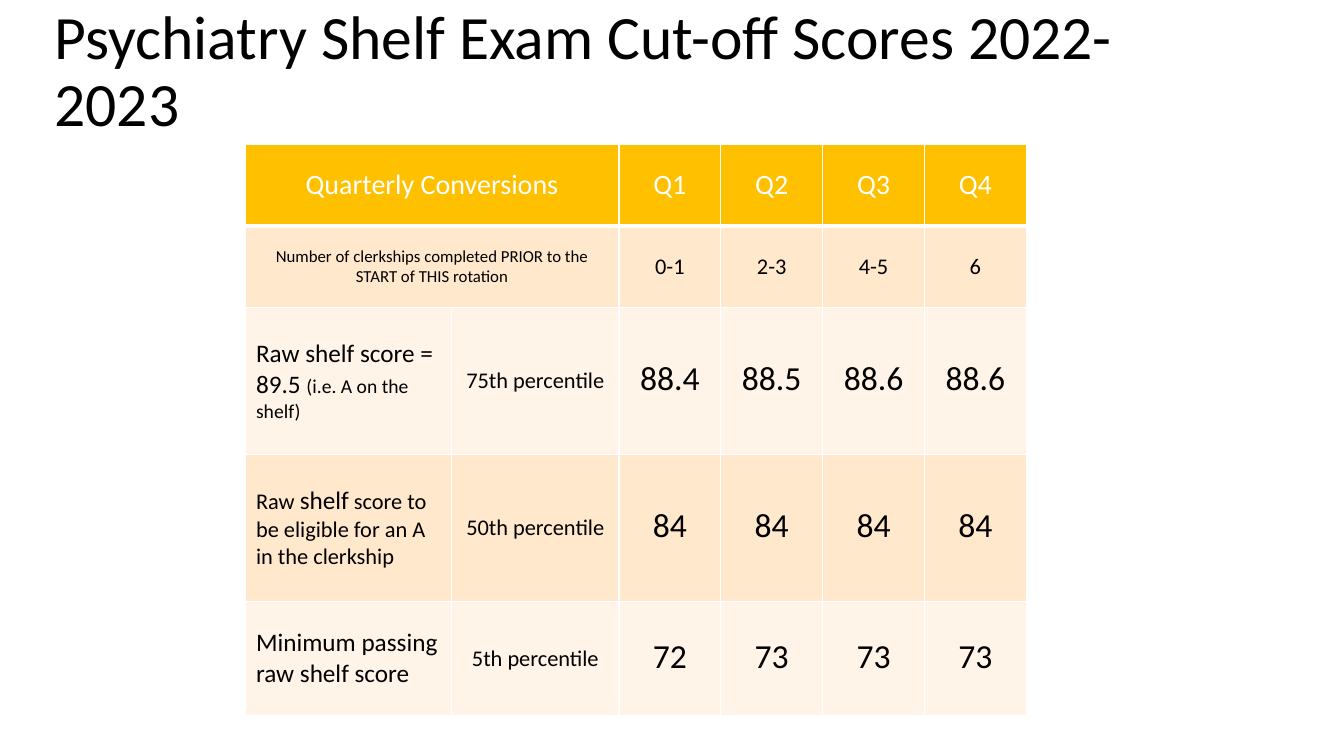
from lxml import etree
from pptx import Presentation
from pptx.dml.color import RGBColor
from pptx.enum import text
from pptx.oxml import ns
from pptx.util import Inches, Pt

WHITE = RGBColor(0xFF, 0xFF, 0xFF)
BLACK = RGBColor(0, 0, 0)
GOLD = RGBColor(0xFF, 0xC0, 0x00)
PEACH = RGBColor(0xFF, 0xE8, 0xCC)
CREAM = RGBColor(0xFF, 0xF4, 0xE7)
FONT = "Calibri"

COL_WIDTHS = [2.05, 1.66] + [1.01] * 4
ROW_HEIGHTS = [0.81, 0.81, 1.46, 1.46, 1.13]
ROW_FILLS = [GOLD, PEACH, CREAM, PEACH, CREAM]
LABEL_INSETS = (0.11, 0.06, 0.11, 0.06)
SCORE_INSETS = (0.01, 0.01, 0.01, 0.05)

# Spanning rows: label, label size, quarter values, value size
SPANNING_ROWS = [
    ("Quarterly Conversions", 20, ["Q1", "Q2", "Q3", "Q4"], 20),
    ("Number of clerkships completed PRIOR to the START of THIS rotation", 12,
     ["0-1", "2-3", "4-5", "6"], 16),
]
# Score rows: label runs with sizes, percentile, quarter scores
SCORE_ROWS = [
    ([("Raw shelf score = 89.5 ", 18), ("(i.e. A on the shelf)", 14)],
     "75th percentile", ["88.4", "88.5", "88.6", "88.6"]),
    ([("Raw ", 16), ("shelf", 18),
      (" score to be eligible for an A in the clerkship", 16)],
     "50th percentile", ["84"] * 4),
    ([("Minimum passing raw shelf score", 18)],
     "5th percentile", ["72", "73", "73", "73"]),
]


def format_run(r, size, color):
    r.font.name = FONT
    r.font.size = Pt(size)
    r.font.bold = False
    r.font.color.rgb = color


def set_borders(cell, bottom):
    tc_pr = cell._tc.get_or_add_tcPr()
    for i, (side, width) in enumerate([("L", 1), ("R", 1), ("T", 1), ("B", bottom)]):
        ln = etree.Element(ns.qn("a:ln" + side), w=str(Pt(width)))
        fill = etree.SubElement(ln, ns.qn("a:solidFill"))
        etree.SubElement(fill, ns.qn("a:srgbClr"), val=str(WHITE))
        tc_pr.insert(i, ln)


def fill_cell(cell, runs, color, align=text.PP_ALIGN.CENTER, insets=LABEL_INSETS):
    cell.vertical_anchor = text.MSO_ANCHOR.MIDDLE
    (cell.margin_left, cell.margin_top,
     cell.margin_right, cell.margin_bottom) = map(Inches, insets)
    p = cell.text_frame.paragraphs[0]
    p.alignment = align
    for words, size in runs:
        r = p.add_run()
        r.text = words
        format_run(r, size, color)


def add_title(s, left, top, width, height):
    sp = s.shapes.title
    sp.left, sp.top, sp.width, sp.height = map(Inches, (left, top, width, height))
    tf = sp.text_frame
    tf.text = "Psychiatry Shelf Exam Cut-off Scores 2022-2023"
    tf.word_wrap = True
    tf.auto_size = text.MSO_AUTO_SIZE.NONE
    tf.vertical_anchor = text.MSO_ANCHOR.MIDDLE
    p = tf.paragraphs[0]
    p.alignment = text.PP_ALIGN.LEFT
    p.line_spacing = 0.9
    format_run(p.runs[0], 44, BLACK)


def add_score_table(s, left, top, width, height):
    table = s.shapes.add_table(len(ROW_HEIGHTS), len(COL_WIDTHS),
                               *map(Inches, (left, top, width, height))).table
    for col, w in zip(table.columns, COL_WIDTHS):
        col.width = Inches(w)
    for row, h in zip(table.rows, ROW_HEIGHTS):
        row.height = Inches(h)

    # Fills and borders
    for i, color in enumerate(ROW_FILLS):
        for cell in table.rows[i].cells:
            cell.fill.solid()
            cell.fill.fore_color.rgb = color
            set_borders(cell, 3 if i == 0 else 1)

    # Header and clerkship count
    for i, (label, label_size, values, size) in enumerate(SPANNING_ROWS):
        color = WHITE if i == 0 else BLACK
        table.cell(i, 0).merge(table.cell(i, 1))
        fill_cell(table.cell(i, 0), [(label, label_size)], color)
        for j, value in enumerate(values, 2):
            fill_cell(table.cell(i, j), [(value, size)], color)

    # Cut-off scores
    for i, (label_runs, percentile, scores) in enumerate(SCORE_ROWS, len(SPANNING_ROWS)):
        fill_cell(table.cell(i, 0), label_runs, BLACK, text.PP_ALIGN.LEFT)
        fill_cell(table.cell(i, 1), [(percentile, 16)], BLACK)
        for j, score in enumerate(scores, 2):
            fill_cell(table.cell(i, j), [(score, 24)], BLACK, insets=SCORE_INSETS)


def main():
    prs = Presentation()
    prs.slide_width, prs.slide_height = Inches(13.33), Inches(7.5)
    s = prs.slides.add_slide(prs.slide_layouts[5])
    add_title(s, 0.44, 0, 11.94, 1.45)
    add_score_table(s, 2.43, 1.43, sum(COL_WIDTHS), sum(ROW_HEIGHTS))
    prs.save("out.pptx")


if __name__ == "__main__":
    main()
